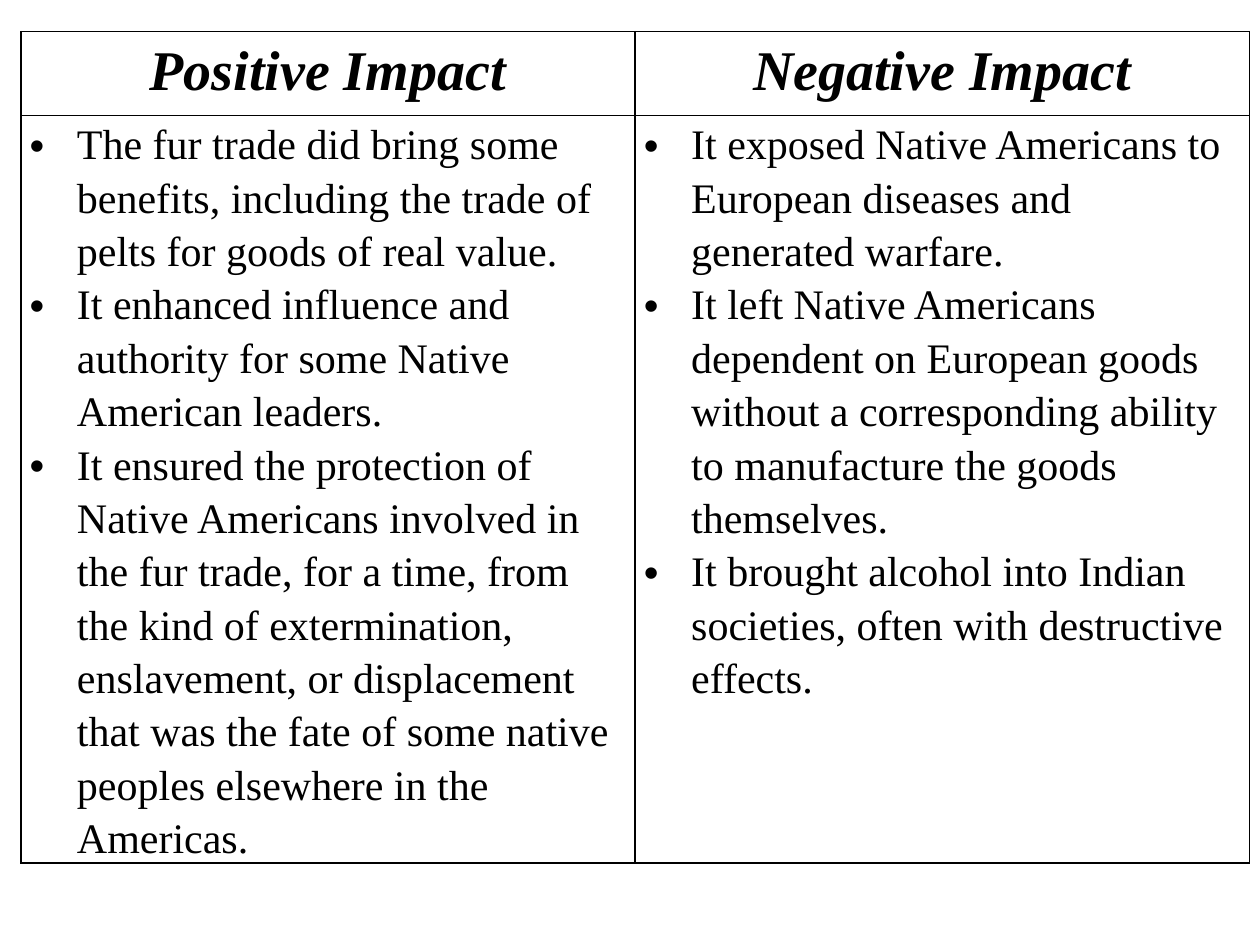
from pptx import Presentation
from pptx.dml.color import RGBColor
from pptx.enum.text import PP_ALIGN
from pptx.oxml import parse_xml
from pptx.oxml.ns import nsdecls
from pptx.util import Pt

COLORS = {"ink": "000000", "paper": "FFFFFF"}

IMPACTS = {
    "Positive Impact": [
        "The fur trade did bring some benefits, including the trade of pelts "
        "for goods of real value.",
        "It enhanced influence and authority for some Native American leaders.",
        "It ensured the protection of Native Americans involved in the fur trade, "
        "for a time, from the kind of extermination, enslavement, or displacement "
        "that was the fate of some native peoples elsewhere in the Americas.",
    ],
    "Negative Impact": [
        "It exposed Native Americans to European diseases and generated warfare.",
        "It left Native Americans dependent on European goods without a "
        "corresponding ability to manufacture the goods themselves.",
        "It brought alcohol into Indian societies, often with destructive effects.",
    ],
}


class Deck:
    font = "Times New Roman"
    spacing = 1.15
    indent = Pt(27)
    inset = Pt(5)
    border = Pt(1)

    def __init__(self, slide):
        self.slide = slide

    def table(self, left, top, widths, heights, frame):
        """Add a plain table; the frame is taller than its least row heights."""
        shape = self.slide.shapes.add_table(
            len(heights), len(widths), left, top, sum(widths), frame)
        table = shape.table
        table.first_row = table.horz_banding = False
        for col, width in zip(table.columns, widths):
            col.width = width
        for row, height in zip(table.rows, heights):
            row.height = height
        shape.height = frame
        return table

    def cell(self, cell, lines, size, title=False):
        cell.margin_left = cell.margin_right = self.inset
        cell.margin_top = cell.margin_bottom = 0
        cell.fill.solid()
        cell.fill.fore_color.rgb = RGBColor.from_string(COLORS["paper"])
        self.edges(cell)
        cell.text_frame.text = "\n".join(lines)
        for para in cell.text_frame.paragraphs:
            para.line_spacing = self.spacing
            if title:
                para.alignment = PP_ALIGN.CENTER
            else:
                self.bullet(para)
            for run in para.runs:
                font = run.font
                font.name, font.size = self.font, Pt(size)
                font.bold = font.italic = title
                font.color.rgb = RGBColor.from_string(COLORS["ink"])

    def edges(self, cell):
        props = cell._tc.get_or_add_tcPr()
        for i, side in enumerate("LRTB"):
            props.insert(i, parse_xml(
                f'<a:ln{side} {nsdecls("a")} w="{self.border}"><a:solidFill>'
                f'<a:srgbClr val="{COLORS["ink"]}"/></a:solidFill></a:ln{side}>'))

    def bullet(self, para):
        props = para._p.get_or_add_pPr()
        props.set("marL", str(self.indent))
        props.set("indent", str(-self.indent))
        props.append(parse_xml(f'<a:buFont {nsdecls("a")} typeface="Arial"/>'))
        props.append(parse_xml(f'<a:buChar {nsdecls("a")} char="•"/>'))


def main():
    prs = Presentation()
    prs.slide_width, prs.slide_height = Pt(720), Pt(540)
    deck = Deck(prs.slides.add_slide(prs.slide_layouts[6]))
    table = deck.table(Pt(12), Pt(18), [Pt(351)] * 2, [Pt(48), Pt(363)], Pt(512))
    for col, (title, points) in enumerate(IMPACTS.items()):
        deck.cell(table.cell(0, col), [title], 32, title=True)
        deck.cell(table.cell(1, col), points, 24)
    prs.save("out.pptx")


if __name__ == "__main__":
    main()
